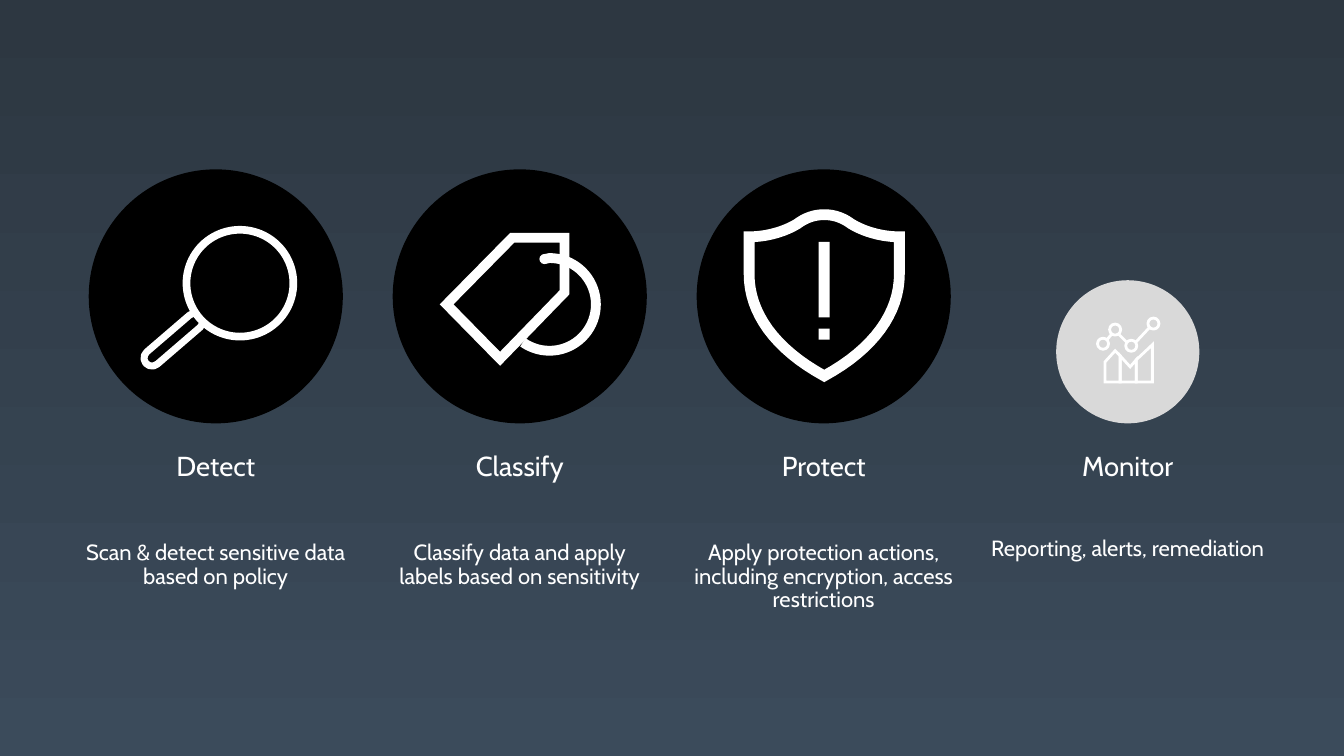
from math import cos, radians, sin

from lxml import etree
from pptx import Presentation
from pptx.dml.color import RGBColor
from pptx.enum.shapes import MSO_CONNECTOR, MSO_SHAPE
from pptx.enum.text import MSO_AUTO_SIZE, PP_ALIGN
from pptx.oxml.ns import qn
from pptx.util import Inches, Pt

ELLIPSE, RECTANGLE = MSO_SHAPE.OVAL, MSO_SHAPE.RECTANGLE
ROUNDED = MSO_SHAPE.ROUNDED_RECTANGLE
STRAIGHT = MSO_CONNECTOR.STRAIGHT
CENTER, GROW = PP_ALIGN.CENTER, MSO_AUTO_SIZE.SHAPE_TO_FIT_TEXT
WHITE, BLACK, GREY = "FFFFFF", "000000", "D9D9D9"
hex_color = RGBColor.from_string

prs = Presentation()
prs.slide_width, prs.slide_height = Inches(13.33), Inches(7.5)
slide = prs.slides.add_slide(prs.slide_layouts[6])
shapes = slide.shapes


def add_part(kind, cx, cy, width, height, fill=None, stroke=None):
    """Add a preset shape around a centre; stroke is a white line width."""
    part = shapes.add_shape(kind, Inches(cx - width / 2), Inches(cy - height / 2),
                            Inches(width), Inches(height))
    part.shadow.inherit = False
    if fill:
        part.fill.solid()
        part.fill.fore_color.rgb = hex_color(fill)
    else:
        part.fill.background()
    if stroke:
        part.line.color.rgb = hex_color(WHITE)
        part.line.width = Pt(stroke)
    else:
        part.line.fill.background()
    return part


def add_outline(points, stroke, close=True):
    """Add an unfilled white outline with sharp corners."""
    corners = [(Inches(x), Inches(y)) for x, y in points]
    builder = shapes.build_freeform(*corners[0])
    builder.add_line_segments(corners[1:], close=close)
    outline = builder.convert_to_shape()
    outline.shadow.inherit = False
    outline.fill.background()
    outline.line.color.rgb = hex_color(WHITE)
    outline.line.width = Pt(stroke)
    join = etree.SubElement(outline.line._get_or_add_ln(), qn("a:miter"))
    join.set("lim", "800000")


# Background
backdrop = slide.background.fill
backdrop.gradient()
backdrop.gradient_angle = 270
for stop, color in zip(backdrop.gradient_stops, ("2D3741", "3B4B5B")):
    stop.color.rgb = hex_color(color)

# Four columns: circle, step name, description
FIRST, STEP, BASELINE = 2.14, 3.015, 4.2
steps = [
    ("Detect", "Scan & detect sensitive data based on policy", 2.52, BLACK, 2.84),
    ("Classify", "Classify data and apply labels based on sensitivity", 2.52, BLACK, 2.84),
    ("Protect", "Apply protection actions, including encryption, access restrictions",
     2.52, BLACK, 2.84),
    ("Monitor", "Reporting, alerts, remediation", 1.42, GREY, 3),
]
for column, (name, description, diameter, color, text_width) in enumerate(steps):
    center = FIRST + column * STEP
    add_part(ELLIPSE, center, BASELINE - diameter / 2, diameter, diameter, color)
    for text, top, width, size in ((name, 4.34, 2.84, 19.6),
                                   (description, 5.21, text_width, 15.7)):
        box = shapes.add_textbox(Inches(center - width / 2), Inches(top),
                                 Inches(width), Inches(0.78))
        frame = box.text_frame
        frame.word_wrap = True
        frame.margin_left = frame.margin_right = Inches(0.1)
        frame.margin_top = frame.margin_bottom = Inches(0.16)
        if text == description:
            frame.auto_size = GROW
        frame.text = text
        paragraph = frame.paragraphs[0]
        paragraph.alignment = CENTER
        paragraph.line_spacing = 0.9
        paragraph.space_after = Pt(5.9)
        font = paragraph.runs[0].font
        font.name, font.size = "Cabin", Pt(size)
        font.color.rgb = hex_color(WHITE)

# Detect: magnifying glass
handle = add_part(ROUNDED, 1.72, 3.37, 0.16, 0.72, stroke=5)
handle.adjustments[0] = 0.5
handle.rotation = 49.3
add_part(ELLIPSE, 2.38, 2.81, 1.06, 1.06, BLACK, 5.5)

# Classify: tag with its string
string_loop = [(5.45 + 0.46 * cos(radians(a)), 3.02 + 0.46 * sin(radians(a)))
               for a in range(-90, 126, 5)]
add_outline([(5.4, 2.57)] + string_loop, 7, close=False)
add_part(ELLIPSE, 5.4, 2.57, 0.1, 0.1, WHITE)
add_outline([(5.6, 2.36), (5.08, 2.36), (4.43, 3.02), (4.96, 3.56), (5.6, 2.9)], 7)

# Protect: shield, its left half curved and then mirrored
AXIS, SAMPLES = 8.175, 16
curves = [
    ((AXIS, 2.13), (8.08, 2.13), (7.99, 2.16), (7.91, 2.22)),
    ((7.91, 2.22), (7.78, 2.3), (7.6, 2.35), (7.43, 2.35)),
    ((7.43, 2.72), (7.43, 3.1), (7.68, 3.46), (AXIS, 3.73)),
]
left_half = []
for curve in curves:
    for i in range(SAMPLES + 1):
        t = i / SAMPLES
        weights = ((1 - t) ** 3, 3 * t * (1 - t) ** 2, 3 * t ** 2 * (1 - t), t ** 3)
        point = tuple(sum(w * p[axis] for w, p in zip(weights, curve)) for axis in (0, 1))
        if point not in left_half:
            left_half.append(point)
right_half = [(2 * AXIS - x, y) for x, y in reversed(left_half[1:-1])]
add_outline(left_half + right_half, 7.7)
add_part(RECTANGLE, AXIS, 2.775, 0.11, 0.75, WHITE)
add_part(RECTANGLE, AXIS, 3.315, 0.11, 0.11, WHITE)

# Monitor: area bars under a trend of linked dots
for bar in (
    [(11.06, 3.48), (10.96, 3.59), (10.96, 3.79), (11.11, 3.79), (11.11, 3.53)],
    [(11.21, 3.64), (11.11, 3.53), (11.11, 3.79), (11.27, 3.79), (11.27, 3.57)],
    [(11.27, 3.57), (11.27, 3.79), (11.43, 3.79), (11.43, 3.42)],
):
    add_outline(bar, 2)
for x1, y1, x2, y2 in ((11.03, 3.31, 10.98, 3.37), (11.18, 3.4, 11.09, 3.31),
                       (11.4, 3.25, 11.26, 3.4)):
    link = shapes.add_connector(STRAIGHT, Inches(x1), Inches(y1), Inches(x2), Inches(y2))
    link.line.color.rgb = hex_color(WHITE)
    link.line.width = Pt(2)
    etree.SubElement(link._element.spPr, qn("a:effectLst"))
for cx, cy in ((10.94, 3.41), (11.06, 3.27), (11.22, 3.43), (11.44, 3.21)):
    add_part(ELLIPSE, cx, cy, 0.11, 0.11, stroke=2)

prs.save("out.pptx")
